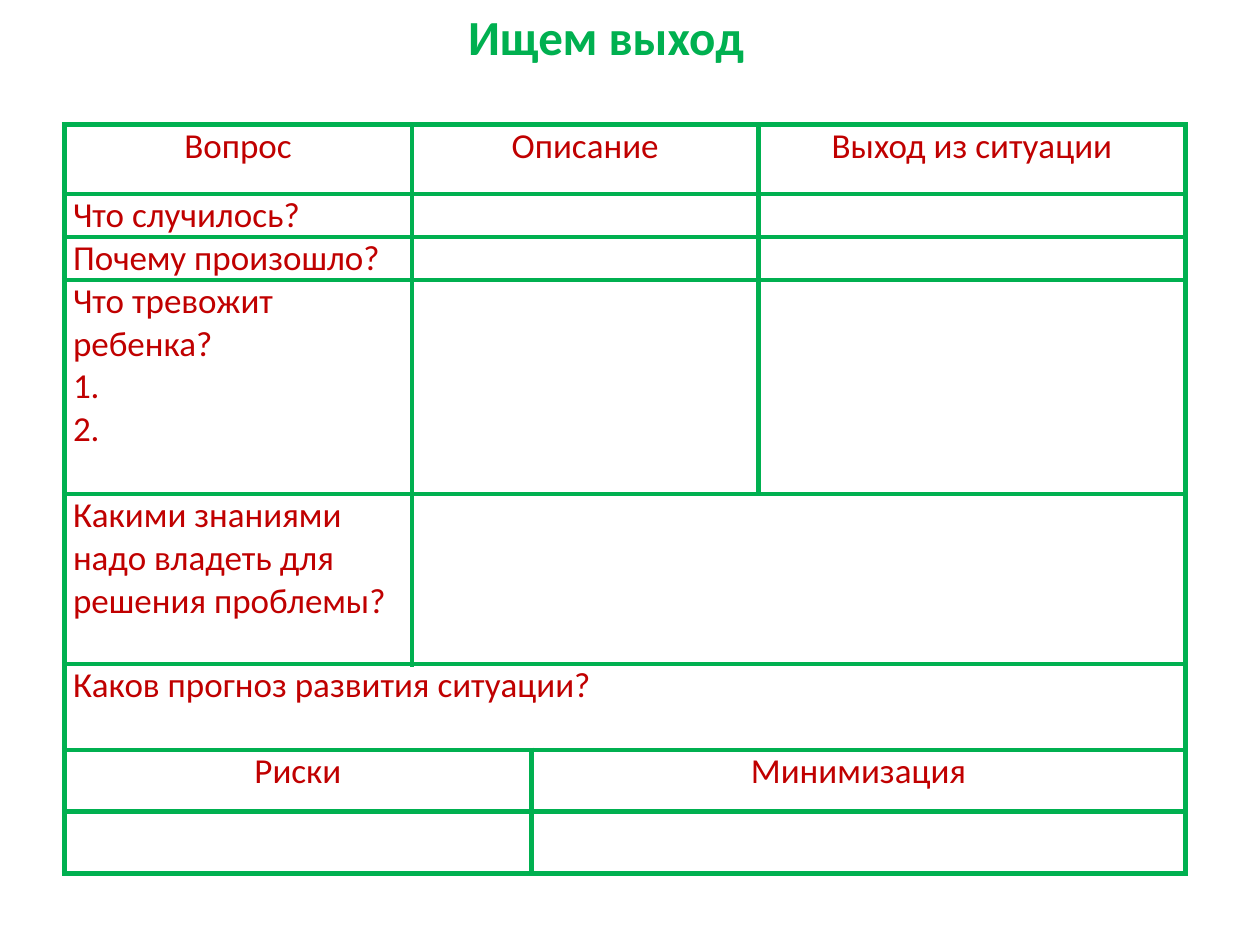
import dataclasses

import pptx
import pptx.dml.color
import pptx.enum.text
import pptx.oxml
import pptx.oxml.ns
import pptx.util

Inches = pptx.util.Inches
Align = pptx.enum.text.PP_ALIGN
Anchor = pptx.enum.text.MSO_ANCHOR


@dataclasses.dataclass(frozen=True)
class Theme:
    font: str = "Calibri"
    green: str = "00B050"
    red: str = "C00000"
    title_size: int = 28
    table_size: int = 20
    border_width: int = 3


THEME = Theme()
COLUMN_WIDTHS = [2.76, 0.95, 1.8, 3.39]
ROW_HEIGHTS = [0.55, 0.34, 0.34, 1.7, 1.35, 0.68, 0.49, 0.49]
HEADINGS = {
    (0, 0): "Вопрос",
    (0, 1): "Описание",
    (0, 3): "Выход из ситуации",
    (6, 0): "Риски",
    (6, 2): "Минимизация",
}
QUESTIONS = {
    (1, 0): "Что случилось?",
    (2, 0): "Почему произошло?",
    (3, 0): "Что тревожит ребенка?\n1.\n2.",
    (4, 0): "Какими знаниями надо владеть для решения проблемы?",
    (5, 0): "Каков прогноз развития ситуации?",
}
MERGES = [(row, 1, 2) for row in range(4)] + [(4, 1, 3), (5, 0, 3)]
MERGES += [(row, first, first + 1) for row in (6, 7) for first in (0, 2)]


def write_text(frame, text, size, color, bold=False, alignment=Align.LEFT):
    frame.text = text
    for paragraph in frame.paragraphs:
        paragraph.alignment = alignment
        for run in paragraph.runs:
            run.font.name = THEME.font
            run.font.size = pptx.util.Pt(size)
            run.font.bold = bold
            run.font.color.rgb = pptx.dml.color.RGBColor.from_string(color)


def add_title(slide):
    title = slide.shapes.title
    title.left, title.top = Inches(2.17), Inches(0)
    title.width, title.height = Inches(5.28), Inches(0.57)
    title.text_frame.vertical_anchor = Anchor.TOP
    write_text(title.text_frame, "Ищем выход", THEME.title_size, THEME.green,
               bold=True, alignment=Align.CENTER)


def set_borders(cell):
    properties = cell._tc.get_or_add_tcPr()
    width = pptx.util.Pt(THEME.border_width)
    for index, side in enumerate("LRTB"):
        line = pptx.oxml.parse_xml(
            f'<a:ln{side} {pptx.oxml.ns.nsdecls("a")} w="{width}">'
            f'<a:solidFill><a:srgbClr val="{THEME.green}"/></a:solidFill>'
            f'</a:ln{side}>'
        )
        properties.insert(index, line)


def format_cell(cell):
    cell.margin_left = cell.margin_right = Inches(0.07)
    cell.margin_top = cell.margin_bottom = 0
    cell.vertical_anchor = Anchor.TOP
    cell.fill.background()
    set_borders(cell)


def add_table(slide):
    frame = slide.shapes.add_table(
        len(ROW_HEIGHTS), len(COLUMN_WIDTHS), Inches(0.51), Inches(0.99),
        Inches(sum(COLUMN_WIDTHS)), Inches(sum(ROW_HEIGHTS)))
    table = frame.table
    table.first_row = table.horz_banding = False
    for column, width in zip(table.columns, COLUMN_WIDTHS):
        column.width = Inches(width)
    for row, height in zip(table.rows, ROW_HEIGHTS):
        row.height = Inches(height)
    for cell in table.iter_cells():
        format_cell(cell)
    for row, first, last in MERGES:
        table.cell(row, first).merge(table.cell(row, last))
    for texts, alignment in ((HEADINGS, Align.CENTER), (QUESTIONS, Align.LEFT)):
        for (row, column), text in texts.items():
            write_text(table.cell(row, column).text_frame, text,
                       THEME.table_size, THEME.red, alignment=alignment)


def main():
    presentation = pptx.Presentation()
    presentation.slide_width = Inches(10)
    presentation.slide_height = Inches(7.5)
    slide = presentation.slides.add_slide(presentation.slide_layouts[5])
    add_title(slide)
    add_table(slide)
    presentation.save("out.pptx")


if __name__ == "__main__":
    main()
